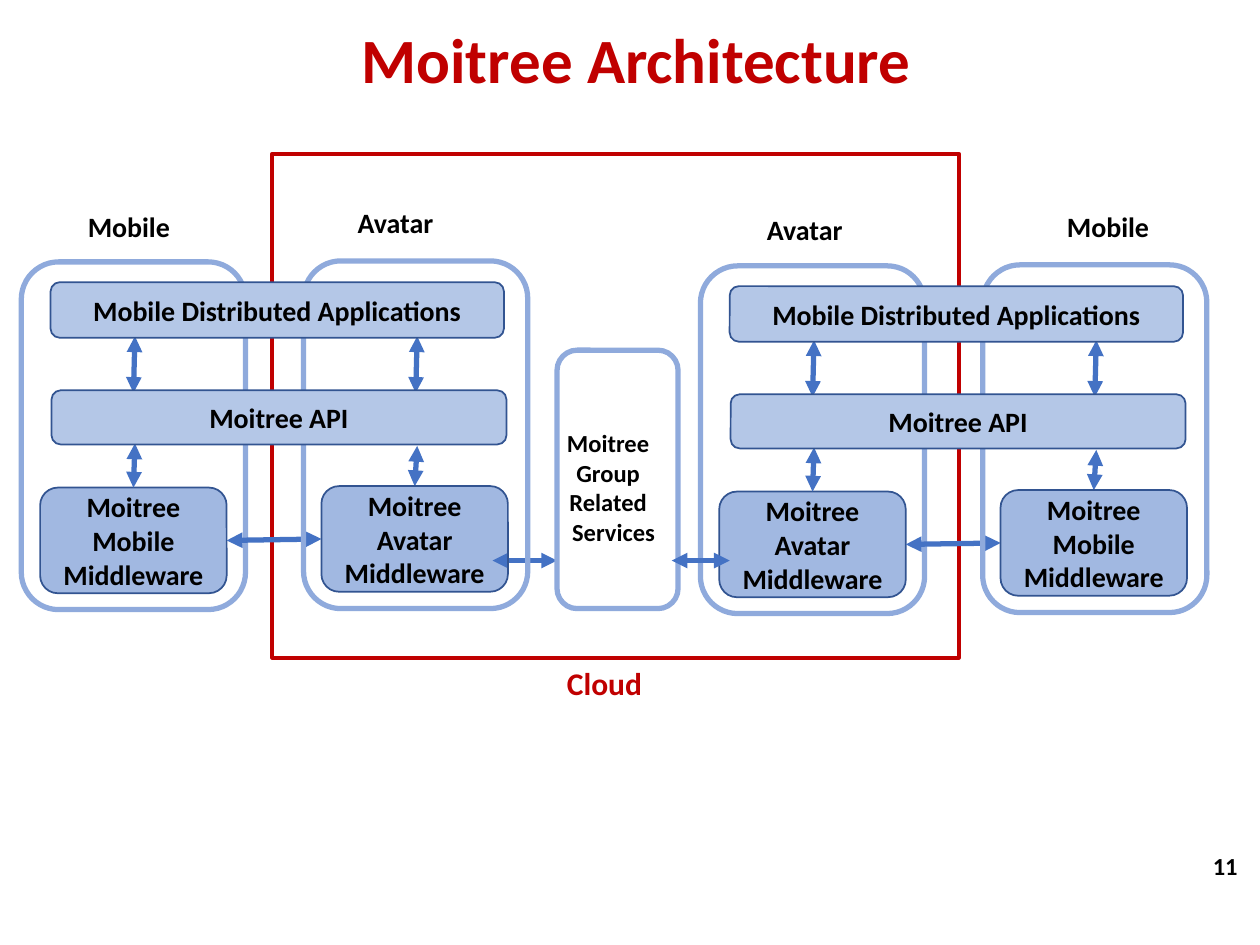
import pptx
import pptx.util
import pptx.dml.color
import pptx.enum.shapes
import pptx.enum.text
import pptx.oxml
import pptx.oxml.ns
import lxml.etree

Cm, Pt = pptx.util.Cm, pptx.util.Pt
RGB = pptx.dml.color.RGBColor.from_string
SHAPE = pptx.enum.shapes.MSO_SHAPE
ALIGN = pptx.enum.text.PP_ALIGN
ANCHOR = pptx.enum.text.MSO_ANCHOR
qn = pptx.oxml.ns.qn

COLORS = {"red": "C00000", "black": "000000", "arrow": "4472C4",
          "panel": "8FAADC", "edge": "325491", "bar": "B4C7E7"}

CLOUD = (5.49, 3.1, 13.84, 10.16)
SERVICES = (11.23, 7.06, 2.44, 5.21)
PANEL_SIZE = (4.52, 7.01)
BOX_SIZE = (3.76, 2.13)
PANELS = [(0.43, 5.28), (6.12, 5.26)]
BOXES = [(0.81, 9.83), (6.48, 9.8)]
BARS = [("Mobile Distributed Applications", (1.02, 5.69, 9.14, 1.12)),
        ("Moitree API", (1.04, 7.87, 9.17, 1.09))]
ARROWS = [(8.41, 6.78, 8.38, 7.92), (2.72, 6.78, 2.69, 7.92),
          (8.41, 8.99, 8.36, 9.8), (2.72, 8.94, 2.69, 9.83)]
SIDE_LINK = (4.57, 10.9, 6.48, 10.9)
HALVES = [
    ((0, 0), ["Mobile", "Avatar"],
     [(1.52, 4.09, 2.29, 0.94), (6.96, 4.01, 2.69, 0.94)]),
    ((13.69, 0.08), ["Avatar", "Mobile"],
     [(15.21, 4.17, 2.29, 0.94), (21.26, 4.09, 2.44, 0.94)]),
]
SERVICE_LINKS = [(9.93, 11.3, 11.23, 11.3), (13.54, 11.3, 14.71, 11.3)]
TEXTS = [
    (["Moitree Architecture"], (1.88, 0.2, 21.89, 2.13), 36, "red",
     {"alignment": ALIGN.CENTER, "line_spacing": 0.9}, ANCHOR.MIDDLE),
    (["11"], (19.48, 16.94, 5.72, 1.02), 14, "black",
     {"alignment": ALIGN.RIGHT}, ANCHOR.MIDDLE),
    (["Cloud"], (11.18, 13.26, 4.01, 1.02), 18, "red", {}, ANCHOR.TOP),
    (["Moitree ", "Group ", "Related \v Services"], (10.36, 8.51, 3.91, 2.64),
     14, "black", {"alignment": ALIGN.CENTER}, ANCHOR.TOP),
]


def write(sp, lines, size, color, fmt, anchor):
    tf = sp.text_frame
    tf.word_wrap = True
    tf.vertical_anchor = anchor
    tf.text = "\n".join(lines)
    for p in tf.paragraphs:
        for name, value in fmt.items():
            setattr(p, name, value)
        for r in p.runs:
            for name, value in {"name": "Calibri", "size": Pt(size), "bold": True}.items():
                setattr(r.font, name, value)
            r.font.color.rgb = RGB(COLORS[color])


def add_text(shapes, lines, at, size, color, fmt, anchor):
    write(shapes.add_textbox(*map(Cm, at)), lines, size, color, fmt, anchor)


def add_block(shapes, kind, at, line, width, fill=None, alpha=None, text=None):
    sp = shapes.add_shape(kind, *map(Cm, at))
    sp.shadow.inherit = False
    sp.line.color.rgb = RGB(COLORS[line])
    sp.line.width = Pt(width)
    if fill:
        sp.fill.solid()
        sp.fill.fore_color.rgb = RGB(COLORS[fill])
    else:
        sp.fill.background()
    if alpha:
        clr = sp.fill._xPr.find(qn("a:solidFill"))[0]
        lxml.etree.SubElement(clr, qn("a:alpha"), val=str(alpha * 1000))
    if text:
        write(sp, [text], 16, "black", {"alignment": ALIGN.CENTER}, ANCHOR.MIDDLE)
    return sp


def add_arrow(shapes, ends):
    cn = shapes.add_connector(pptx.enum.shapes.MSO_CONNECTOR.STRAIGHT, *map(Cm, ends))
    cn.line.color.rgb = RGB(COLORS["arrow"])
    cn.line.width = Pt(3)
    ln = cn.line._get_or_add_ln()
    for tag in ("a:headEnd", "a:tailEnd"):
        lxml.etree.SubElement(ln, qn(tag), type="triangle")
    lxml.etree.SubElement(cn._element.spPr, qn("a:effectLst"))
    return cn


def add_stack(shapes, name, panel, box):
    add_block(shapes, SHAPE.ROUNDED_RECTANGLE, panel + PANEL_SIZE, "panel", 3)
    return add_block(shapes, SHAPE.ROUNDED_RECTANGLE, box + BOX_SIZE, "edge", 1,
                     "arrow", 50, f"Moitree {name} Middleware")


def add_half(shapes, offset, names, labels):
    dx, dy = offset

    def move(at):
        return (at[0] + dx, at[1] + dy) + at[2:]

    def move_ends(ends):
        return move(ends[:2]) + move(ends[2:])

    left = add_stack(shapes, names[0], move(PANELS[0]), move(BOXES[0]))
    for ends in ARROWS:
        add_arrow(shapes, move_ends(ends))
    link = add_arrow(shapes, move_ends(SIDE_LINK))
    for name, at in zip(names, labels):
        add_text(shapes, [name], at, 16, "black", {}, ANCHOR.TOP)
    right = add_stack(shapes, names[1], move(PANELS[1]), move(BOXES[1]))
    link.begin_connect(left, 3)
    link.end_connect(right, 1)
    for text, at in BARS:
        add_block(shapes, SHAPE.ROUNDED_RECTANGLE, move(at), "edge", 1, "bar", text=text)


def main():
    prs = pptx.Presentation()
    prs.slide_width, prs.slide_height = Cm(25.4), Cm(19.05)
    s = prs.slides.add_slide(prs.slide_layouts[6])
    add_block(s.shapes, SHAPE.RECTANGLE, CLOUD, "red", 2.25)
    add_arrow(s.shapes, SERVICE_LINKS[0])
    for half in HALVES:
        add_half(s.shapes.add_group_shape().shapes, *half)
    add_block(s.shapes, SHAPE.ROUNDED_RECTANGLE, SERVICES, "panel", 3)
    add_arrow(s.shapes, SERVICE_LINKS[1])
    for text in TEXTS:
        add_text(s.shapes, *text)
    prs.save("out.pptx")


if __name__ == "__main__":
    main()
